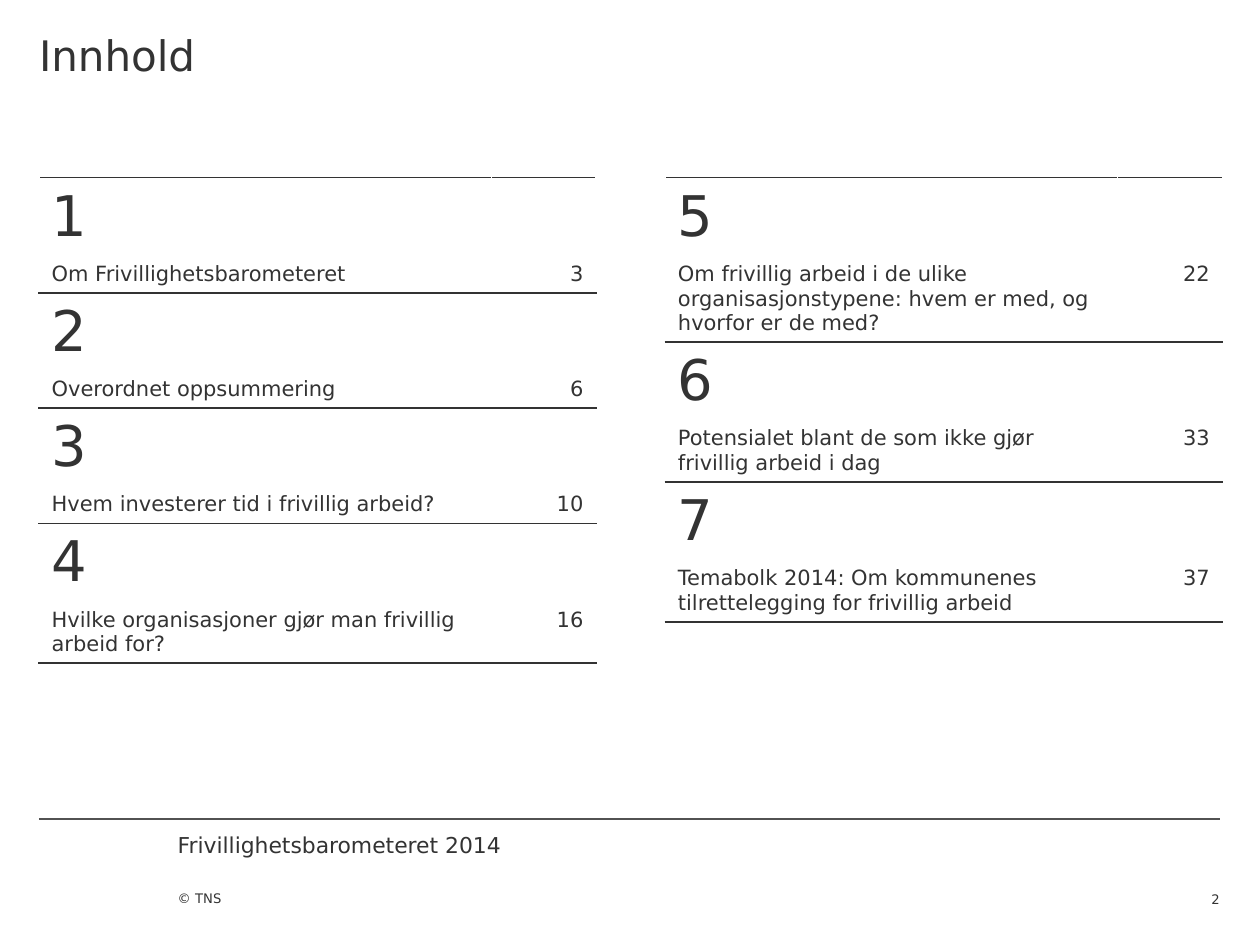
"""Build the contents slide with two tables of numbered chapters."""
from typing import NamedTuple

from lxml.etree import SubElement
from pptx import Presentation
from pptx.dml.color import RGBColor
from pptx.enum.shapes import MSO_CONNECTOR
from pptx.enum.text import MSO_ANCHOR, MSO_AUTO_SIZE, PP_ALIGN
from pptx.oxml import parse_xml
from pptx.oxml.ns import nsdecls, qn
from pptx.util import Pt

FONT = "DejaVu Sans"
INK = "333333"
RULE = "525252"
WHITE = "FFFFFF"
LEFT = 22.3
RIGHT = 697
TABLE_TOP = 101.5
COLUMN_WIDTHS = (258.5, 59.8)
NUMBER_HEIGHT = 39.6
CHAPTER_HEIGHT = 20.2


class Chapter(NamedTuple):
    """A numbered chapter and its page."""
    number: str
    title: str
    page: str


class Label(NamedTuple):
    """A footer text and its box."""
    text: str
    left: float
    top: float
    width: float
    height: float
    size: float
    align: PP_ALIGN = PP_ALIGN.LEFT
    anchor: MSO_ANCHOR = MSO_ANCHOR.TOP
    bottom: float = 0


LEFT_CHAPTERS = (
    Chapter("1", "Om Frivillighetsbarometeret", "3"),
    Chapter("2", "Overordnet oppsummering", "6"),
    Chapter("3", "Hvem investerer tid i frivillig arbeid?", "10"),
    Chapter("4", "Hvilke organisasjoner gjør man frivillig arbeid for?", "16"),
)
RIGHT_CHAPTERS = (
    Chapter("5", "Om frivillig arbeid i de ulike organisasjonstypene: "
            "hvem er med, og hvorfor er de med?", "22"),
    Chapter("6", "Potensialet blant de som ikke gjør frivillig arbeid i dag", "33"),
    Chapter("7", "Temabolk 2014: Om kommunenes tilrettelegging for "
            "frivillig arbeid", "37"),
)
LABELS = (
    Label("Frivillighetsbarometeret 2014", 101.5, 475.2, 238.3, 30.2, 12.5),
    Label("© TNS", 101.5, 498.2, 200.2, 41.8, 7.5,
          anchor=MSO_ANCHOR.BOTTOM, bottom=22.3),
    Label("2", 657.4, 498.2, 39.6, 20.2, 7.5,
          PP_ALIGN.RIGHT, MSO_ANCHOR.BOTTOM),
)


def rgb(value: str) -> RGBColor:
    """Turn a hex string into a colour."""
    return RGBColor.from_string(value)


def write(tf, text: str, size: float, align=PP_ALIGN.LEFT) -> None:
    """Write one formatted run into the first paragraph."""
    p = tf.paragraphs[0]
    p.alignment = align
    r = p.add_run()
    r.text = text
    r.font.name = FONT
    r.font.size = Pt(size)
    r.font.color.rgb = rgb(INK)


def set_frame(tf, top: float, bottom: float, anchor: MSO_ANCHOR) -> None:
    """Set wrapping, insets and anchor of a text frame."""
    tf.word_wrap = True
    tf.auto_size = MSO_AUTO_SIZE.NONE
    tf.margin_left = tf.margin_right = 0
    tf.margin_top, tf.margin_bottom = Pt(top), Pt(bottom)
    tf.vertical_anchor = anchor


def add_title(s, text: str) -> None:
    """Place and fill the title placeholder."""
    sp = s.shapes.title
    sp.left, sp.top = Pt(LEFT), Pt(0)
    sp.width, sp.height = Pt(RIGHT - LEFT), Pt(81.4)
    set_frame(sp.text_frame, 16.6, 0, MSO_ANCHOR.TOP)
    sp.text_frame.margin_top = Pt(16.6)
    write(sp.text_frame, text, 24)


def add_label(s, label: Label) -> None:
    """Add a footer text box."""
    sp = s.shapes.add_textbox(Pt(label.left), Pt(label.top),
                              Pt(label.width), Pt(label.height))
    set_frame(sp.text_frame, 0, label.bottom, label.anchor)
    write(sp.text_frame, label.text, label.size, label.align)


def add_rule(s, y: float) -> None:
    """Add the horizontal footer rule."""
    line = s.shapes.add_connector(MSO_CONNECTOR.STRAIGHT,
                                  Pt(LEFT), Pt(y), Pt(RIGHT), Pt(y))
    line.line.color.rgb = rgb(RULE)
    line.line.width = Pt(0.75)
    SubElement(line._element.spPr, qn("a:effectLst"))


def format_cell(cell, side: str) -> None:
    """Fill a cell white and rule its top or bottom side."""
    cell.fill.solid()
    cell.fill.fore_color.rgb = rgb(WHITE)
    border = parse_xml(
        f'<a:ln{side} {nsdecls("a")} w="{Pt(1)}"><a:solidFill>'
        f'<a:srgbClr val="{INK}"/></a:solidFill></a:ln{side}>')
    cell._tc.get_or_add_tcPr().insert(0, border)


def add_chapters(s, left: float, chapters: tuple[Chapter, ...]) -> None:
    """Add a table with a number row and a title row per chapter."""
    height = len(chapters) * (NUMBER_HEIGHT + CHAPTER_HEIGHT)
    table = s.shapes.add_table(2 * len(chapters), 2, Pt(left), Pt(TABLE_TOP),
                               Pt(sum(COLUMN_WIDTHS)), Pt(height)).table
    table.first_row = table.horz_banding = False
    for column, width in zip(table.columns, COLUMN_WIDTHS):
        column.width = Pt(width)
    for i, chapter in enumerate(chapters):
        top, bottom = 2 * i, 2 * i + 1
        table.rows[top].height = Pt(NUMBER_HEIGHT)
        table.rows[bottom].height = Pt(CHAPTER_HEIGHT)
        for column in range(2):
            format_cell(table.cell(top, column), "T")
            format_cell(table.cell(bottom, column), "B")
        write(table.cell(top, 0).text_frame, chapter.number, 32)
        write(table.cell(bottom, 0).text_frame, chapter.title, 12)
        write(table.cell(bottom, 1).text_frame, chapter.page, 12, PP_ALIGN.RIGHT)


def main() -> None:
    """Build and save the slide."""
    prs = Presentation()
    prs.slide_width, prs.slide_height = Pt(720), Pt(540)
    s = prs.slides.add_slide(prs.slide_layouts[5])
    add_rule(s, 468)
    add_title(s, "Innhold")
    for label in LABELS:
        add_label(s, label)
    add_chapters(s, LEFT, LEFT_CHAPTERS)
    add_chapters(s, 380.2, RIGHT_CHAPTERS)
    prs.save("out.pptx")


if __name__ == "__main__":
    main()
